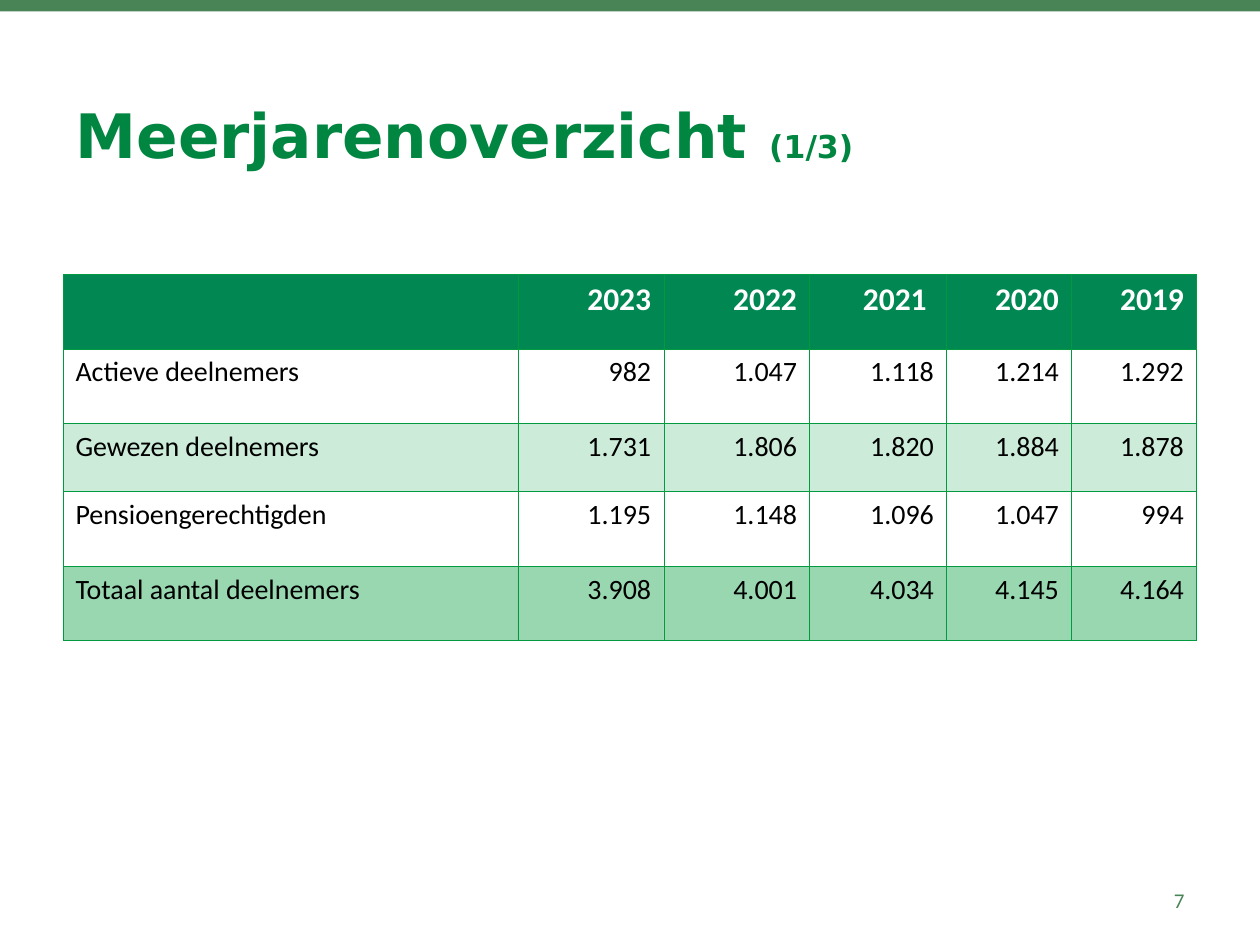
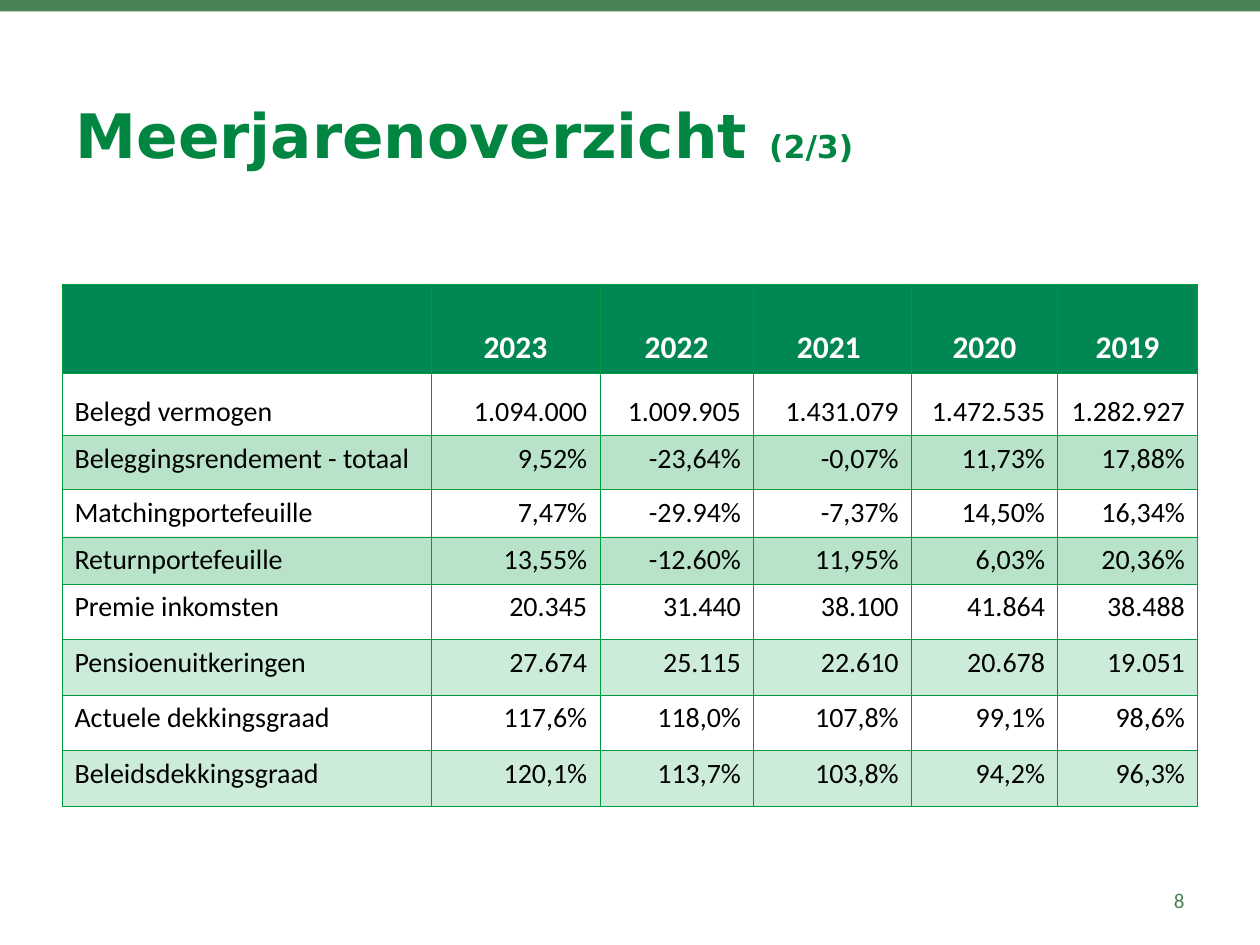
"""Build two multi-year overview slides of a pension fund."""
from dataclasses import dataclass

from lxml import etree
from pptx import Presentation
from pptx.dml.color import RGBColor
from pptx.enum.shapes import MSO_SHAPE
from pptx.enum.text import MSO_ANCHOR, MSO_AUTO_SIZE, PP_ALIGN
from pptx.oxml.ns import qn
from pptx.util import Cm, Pt

RECTANGLE = MSO_SHAPE.RECTANGLE
TOP, MIDDLE, BOTTOM = MSO_ANCHOR.TOP, MSO_ANCHOR.MIDDLE, MSO_ANCHOR.BOTTOM
LEFT, CENTER, RIGHT = PP_ALIGN.LEFT, PP_ALIGN.CENTER, PP_ALIGN.RIGHT
NO_AUTOFIT = MSO_AUTO_SIZE.NONE

BAND_GREEN = "488455"
TITLE_GREEN = "008640"
HEADER_GREEN = "008752"
GRID_GREEN = "009B3E"
WHITE = "FFFFFF"
BLACK = "000000"
TITLE_FONT = "DejaVu Sans"
BODY_FONT = "Calibri"
YEARS = ("2023", "2022", "2021 ", "2020", "2019")
TITLE_ONLY_LAYOUT = 5


@dataclass(frozen=True)
class Row:
    """A table row: height in cm, label, values and strength of its tint."""
    height: float
    label: str
    values: tuple[str, ...]
    tint: int = 0
    anchor: MSO_ANCHOR = TOP


@dataclass(frozen=True)
class Overview:
    """One slide with its counter, page number and table, lengths in cm."""
    counter: str
    number: str
    left: float
    top: float
    widths: tuple[float, ...]
    header_height: float
    header_anchor: MSO_ANCHOR
    header_align: PP_ALIGN
    rows: tuple[Row, ...]


OVERVIEWS = (
    Overview(
        "(1/3)", "7", 1.27, 5.53, (9.17, 2.94, 2.94, 2.76, 2.52, 2.52),
        1.5, TOP, RIGHT,
        (
            Row(1.5, "Actieve deelnemers", ("982", "1.047", "1.118", "1.214", "1.292")),
            Row(1.37, "Gewezen deelnemers", ("1.731", "1.806", "1.820", "1.884", "1.878"), 20),
            Row(1.52, "Pensioengerechtigden", ("1.195", "1.148", "1.096", "1.047", "994")),
            Row(1.48, "Totaal aantal deelnemers", ("3.908", "4.001", "4.034", "4.145", "4.164"), 40),
        ),
    ),
    Overview(
        "(2/3)", "8", 1.25, 5.73, (7.44, 3.4, 3.1, 3.18, 2.95, 2.82),
        1.8, BOTTOM, CENTER,
        (
            Row(1.24, "Belegd vermogen",
                ("1.094.000", "1.009.905", "1.431.079", "1.472.535", "1.282.927"), anchor=BOTTOM),
            Row(1.1, "Beleggingsrendement - totaal",
                ("9,52%", "-23,64%", "-0,07%", "11,73%", "17,88%"), 28),
            Row(0.95, "Matchingportefeuille", ("7,47%", "-29.94%", "-7,37%", "14,50%", "16,34%")),
            Row(0.95, "Returnportefeuille", ("13,55%", "-12.60%", "11,95%", "6,03%", "20,36%"), 28),
            Row(1.12, "Premie inkomsten", ("20.345", "31.440", "38.100", "41.864", "38.488")),
            Row(1.12, "Pensioenuitkeringen", ("27.674", "25.115", "22.610", "20.678", "19.051"), 20),
            Row(1.12, "Actuele dekkingsgraad", ("117,6%", "118,0%", "107,8%", "99,1%", "98,6%")),
            Row(1.12, "Beleidsdekkingsgraad", ("120,1%", "113,7%", "103,8%", "94,2%", "96,3%"), 20),
        ),
    ),
)


def rgb(code: str) -> RGBColor:
    """Turn a hex string into a colour."""
    return RGBColor.from_string(code)


def style_font(font, name: str, size: float, color: str, bold: bool = False) -> None:
    """Set the face, size, colour and weight of a font."""
    font.name = name
    font.size = Pt(size)
    font.bold = bold
    font.color.rgb = rgb(color)


def add_band(page, width: int) -> None:
    """Draw the green band along the top edge."""
    band = page.shapes.add_shape(RECTANGLE, 0, 0, width, Cm(0.23))
    band.shadow.inherit = False
    band.fill.solid()
    band.fill.fore_color.rgb = rgb(BAND_GREEN)
    band.line.fill.background()


def set_title(page, counter: str) -> None:
    """Fill the title placeholder, with the counter in smaller type."""
    title = page.shapes.title
    title.left, title.top, title.width, title.height = Cm(1.27), Cm(1.32), Cm(22.86), Cm(2.77)
    frame = title.text_frame
    frame.auto_size = NO_AUTOFIT
    frame.vertical_anchor = MIDDLE
    para = frame.paragraphs[0]
    para.alignment = LEFT
    for text, size in (("Meerjarenoverzicht ", 35), (counter, 18)):
        span = para.add_run()
        span.text = text
        style_font(span.font, TITLE_FONT, size, TITLE_GREEN, True)


def add_page_number(page, number: str) -> None:
    """Write the page number at the lower right."""
    box = page.shapes.add_textbox(Cm(18.2), Cm(17.65), Cm(5.93), Cm(1.01))
    frame = box.text_frame
    frame.word_wrap = True
    frame.vertical_anchor = MIDDLE
    frame.text = number
    para = frame.paragraphs[0]
    para.alignment = RIGHT
    style_font(para.runs[0].font, BODY_FONT, 12, BAND_GREEN)


def add_borders(cell) -> None:
    """Give a cell thin green lines on all sides."""
    properties = cell._tc.get_or_add_tcPr()
    for side in ("lnL", "lnR", "lnT", "lnB"):
        line = etree.SubElement(properties, qn(f"a:{side}"), w=str(Pt(0.25)))
        fill = etree.SubElement(line, qn("a:solidFill"))
        etree.SubElement(fill, qn("a:srgbClr"), val=GRID_GREEN)


def fill_cell(cell, color: str, opacity: int) -> None:
    """Fill a cell with a colour at an opacity in percent."""
    if opacity == 0:
        cell.fill.background()
        return
    cell.fill.solid()
    cell.fill.fore_color.rgb = rgb(color)
    if opacity < 100:
        shade = cell._tc.tcPr.find(f"{qn('a:solidFill')}/{qn('a:srgbClr')}")
        etree.SubElement(shade, qn("a:alpha"), val=str(opacity * 1000))


def write_row(table, index: int, row: Row, align: PP_ALIGN, header: bool = False) -> None:
    """Write and format one table row."""
    table.rows[index].height = Cm(row.height)
    size, color = (18, WHITE) if header else (16, BLACK)
    for column, text in enumerate((row.label, *row.values)):
        cell = table.cell(index, column)
        add_borders(cell)
        fill_cell(cell, HEADER_GREEN if header else GRID_GREEN, row.tint)
        cell.vertical_anchor = row.anchor
        cell.text_frame.text = text
        para = cell.text_frame.paragraphs[0]
        para.alignment = align if column else LEFT
        for span in para.runs:
            style_font(span.font, BODY_FONT, size, color, header)


def add_overview_table(page, overview: Overview) -> None:
    """Add the table with years across and figures down."""
    header = Row(overview.header_height, "", YEARS, 100, overview.header_anchor)
    height = header.height + sum(row.height for row in overview.rows)
    frame = page.shapes.add_table(
        len(overview.rows) + 1, len(overview.widths),
        Cm(overview.left), Cm(overview.top), Cm(sum(overview.widths)), Cm(height))
    table = frame.table
    table.horz_banding = False
    for column, width in zip(table.columns, overview.widths):
        column.width = Cm(width)
    write_row(table, 0, header, overview.header_align, True)
    for index, row in enumerate(overview.rows, 1):
        write_row(table, index, row, RIGHT)


def build_page(deck, overview: Overview) -> None:
    """Add one overview slide to the deck."""
    page = deck.slides.add_slide(deck.slide_layouts[TITLE_ONLY_LAYOUT])
    add_band(page, deck.slide_width)
    set_title(page, overview.counter)
    add_overview_table(page, overview)
    add_page_number(page, overview.number)


def main() -> None:
    """Build and save the deck."""
    deck = Presentation()
    deck.slide_width, deck.slide_height = Cm(25.4), Cm(19.05)
    for overview in OVERVIEWS:
        build_page(deck, overview)
    deck.save("out.pptx")


if __name__ == "__main__":
    main()
